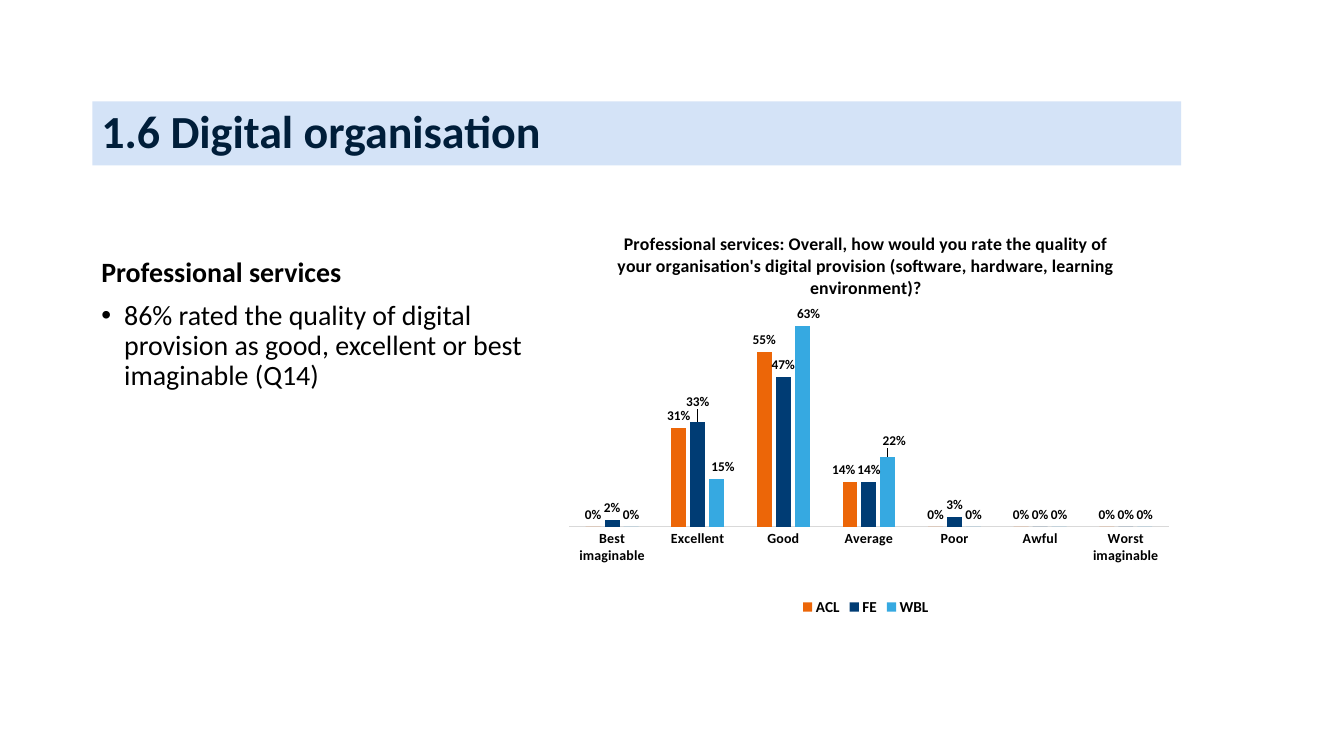
from lxml import etree
from pptx import Presentation
from pptx.chart.data import CategoryChartData
from pptx.dml.color import RGBColor
from pptx.enum.chart import (XL_CHART_TYPE, XL_LABEL_POSITION as LABEL_POS,
                             XL_LEGEND_POSITION as LEGEND_POS, XL_TICK_MARK as TICK)
from pptx.enum.shapes import MSO_SHAPE as SHAPE
from pptx.enum.text import MSO_ANCHOR as ANCHOR, PP_ALIGN as ALIGN
from pptx.oxml import parse_xml
from pptx.oxml.ns import nsdecls, qn
from pptx.util import Inches, Pt

FONT = "Calibri"
BLACK = RGBColor(0x00, 0x00, 0x00)
NAVY = RGBColor(0x00, 0x1E, 0x3A)
PALE_BLUE = RGBColor(0xD4, 0xE3, 0xF7)
AXIS_GREY = RGBColor(0xD9, 0xD9, 0xD9)
ORANGE = RGBColor(0xEC, 0x66, 0x08)
DARK_BLUE = RGBColor(0x00, 0x3C, 0x74)
SKY_BLUE = RGBColor(0x36, 0xA9, 0xE1)

CHART_TITLE = ("Professional services: Overall, how would you rate the quality of your "
               "organisation's digital provision (software, hardware, learning environment)?")
RATINGS = ["Best imaginable", "Excellent", "Good", "Average", "Poor", "Awful",
           "Worst imaginable"]
PROVIDERS = [
    ("ACL", [0, 0.31, 0.55, 0.14, 0, 0, 0], ORANGE),
    ("FE", [0.02, 0.33, 0.47, 0.14, 0.03, 0, 0], DARK_BLUE),
    ("WBL", [0, 0.15, 0.63, 0.22, 0, 0, 0], SKY_BLUE),
]
LABEL_SHIFTS = {
    "ACL": {"Average": (-0.01, 0)},
    "FE": {"Excellent": (0, -0.02)},
    "WBL": {"Excellent": (0.01, 0), "Good": (0.01, 0), "Average": (0.01, -0.01)},
}


def set_font(font, size, bold=True, color=BLACK):
    font.name = FONT
    font.size = Pt(size)
    font.bold = bold
    font.color.rgb = color


def add_text(p, text, size=22, bold=False, color=BLACK, before=0, bullet=False):
    p.alignment = ALIGN.LEFT
    p.line_spacing = 0.9
    p.space_before = Pt(before)
    if bullet:
        pPr = p._p.get_or_add_pPr()
        pPr.set("marL", str(Inches(0.25)))
        pPr.set("indent", str(-Inches(0.25)))
        pPr.append(parse_xml(f'<a:buFont {nsdecls("a")} typeface="Arial"/>'))
        etree.SubElement(pPr, qn("a:buChar"), char="•")
    r = p.add_run()
    r.text = text
    set_font(r.font, size, bold, color)


def add_heading(s, text):
    sp = s.shapes.add_shape(SHAPE.RECTANGLE, Inches(1.01), Inches(1.11),
                            Inches(11.91), Inches(0.7))
    sp.shadow.inherit = False
    sp.fill.solid()
    sp.fill.fore_color.rgb = PALE_BLUE
    sp.line.fill.background()
    tf = sp.text_frame
    tf.word_wrap = True
    tf.vertical_anchor = ANCHOR.MIDDLE
    add_text(tf.paragraphs[0], text, size=36.2, bold=True, color=NAVY)


def add_findings(s):
    tf = s.shapes.add_textbox(Inches(1.01), Inches(2.78), Inches(5.29), Inches(1.79)).text_frame
    tf.word_wrap = True
    add_text(tf.paragraphs[0], "Professional services", bold=True)
    add_text(tf.add_paragraph(),
             "86% rated the quality of digital provision as good, excellent or best "
             "imaginable (Q14)", before=10, bullet=True)


def manual_layout(x, y, size=None):
    parts = [("x", x), ("y", y)]
    if size:
        parts = ([("layoutTarget", "inner"), ("xMode", "edge"), ("yMode", "edge")]
                 + parts + [("w", size[0]), ("h", size[1])])
    body = "".join(f'<c:{tag} val="{val}"/>' for tag, val in parts)
    return parse_xml(f'<c:layout {nsdecls("c")}><c:manualLayout>{body}'
                     '</c:manualLayout></c:layout>')


def format_labels(labels):
    labels.show_value = True
    labels.number_format = "0%"
    labels.number_format_is_linked = False
    labels.position = LABEL_POS.OUTSIDE_END
    set_font(labels.font, 10.5)


def shift_label(series, index, shift):
    label = series.points[index].data_label
    label.position = LABEL_POS.OUTSIDE_END
    set_font(label.font, 10.5)
    idx = series._element.xpath(f"c:dLbls/c:dLbl/c:idx[@val='{index}']")[0]
    idx.addnext(manual_layout(*shift))


def format_axes(chart):
    axis = chart.category_axis
    axis.major_tick_mark = axis.minor_tick_mark = TICK.NONE
    axis.format.line.color.rgb = AXIS_GREY
    axis.format.line.width = Pt(0.75)
    set_font(axis.tick_labels.font, 11)
    axis = chart.value_axis
    axis.minimum_scale, axis.maximum_scale = 0, 0.7
    axis.has_major_gridlines = False
    axis.visible = False


def add_ratings_chart(s):
    data = CategoryChartData(number_format="0%")
    data.categories = RATINGS
    for name, values, _ in PROVIDERS:
        data.add_series(name, values)
    chart = s.shapes.add_chart(XL_CHART_TYPE.COLUMN_CLUSTERED, Inches(6.02), Inches(2.35),
                               Inches(6.9), Inches(4.43), data).chart
    set_font(chart.font, 10, bold=False)
    chart.has_title = True
    r = chart.chart_title.text_frame.paragraphs[0].add_run()
    r.text = CHART_TITLE
    set_font(r.font, 14)
    chart.chart_title.include_in_layout = False
    chart.has_legend = True
    chart.legend.position = LEGEND_POS.BOTTOM
    chart.legend.include_in_layout = False
    set_font(chart.legend.font, 12)
    format_axes(chart)

    plot = chart.plots[0]
    plot.gap_width, plot.overlap = 219, -27
    plot.vary_by_categories = False
    for series, (name, _, color) in zip(plot.series, PROVIDERS):
        series.format.fill.solid()
        series.format.fill.fore_color.rgb = color
        format_labels(series.data_labels)
        for rating, shift in LABEL_SHIFTS[name].items():
            shift_label(series, RATINGS.index(rating), shift)

    area = chart._chartSpace.chart.plotArea
    for old in area.findall(qn("c:layout")):
        area.remove(old)
    area.insert(0, manual_layout(0.03, 0.22, (0.95, 0.55)))


def main():
    prs = Presentation()
    prs.slide_width, prs.slide_height = Inches(14.7), Inches(8.27)
    s = prs.slides.add_slide(prs.slide_layouts[6])
    add_heading(s, "1.6 Digital organisation")
    add_findings(s)
    add_ratings_chart(s)
    prs.save("out.pptx")


if __name__ == "__main__":
    main()
